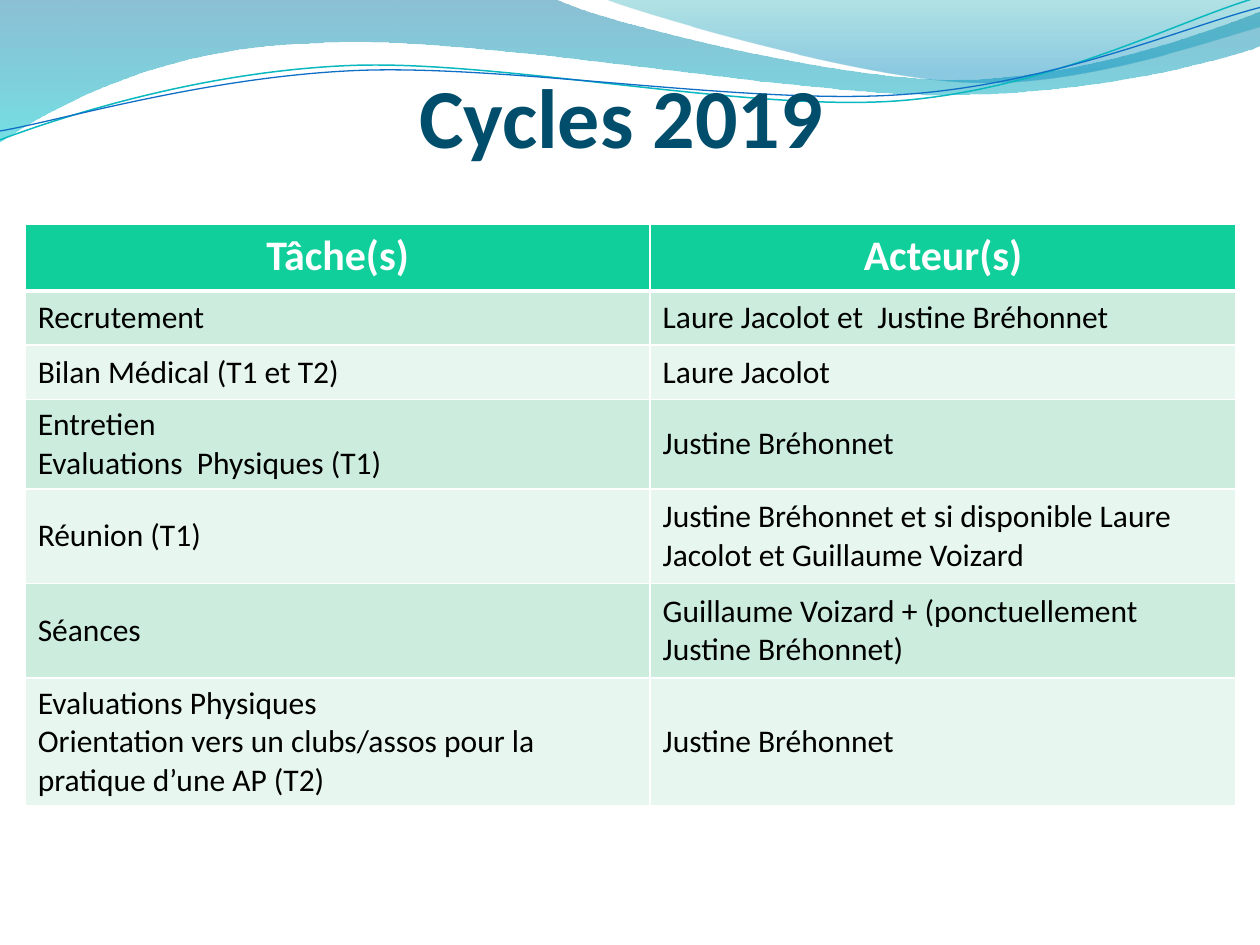
from math import cos, radians, sin

from lxml.etree import SubElement as Sub
from pptx import Presentation
from pptx.dml.color import RGBColor
from pptx.enum.text import MSO_ANCHOR as Anchor, PP_ALIGN as Align
from pptx.oxml import parse_xml
from pptx.oxml.ns import nsdecls, qn
from pptx.util import Inches, Pt

FONT = "Calibri"
WHITE, NAVY = "FFFFFF", "004E6C"
TILT = -2.7

# Each wave: start point, then straight (2 numbers) or curved (6 numbers) parts.
BANDS = [
    ([(0, 0), (4.4, -0.01), (4.76, 0.17, 6.64, 0.63, 7.58, 0.63),
      (8.53, 0.63, 9.58, 0.26, 10, 0.09), (10.01, 0.36),
      (9.83, 0.44, 8.7, 0.76, 7.46, 0.75), (6.22, 0.75, 3.82, 0.28, 2.57, 0.34),
      (1.29, 0.36, 0.46, 0.83, -0.01, 1.13), (0, 0)],
     [(0, "0074A1", 45), (1, "00C6CF", 55)]),
    ([(4.79, -0.01), (5.09, 0.11, 6.82, 0.62, 7.69, 0.65),
      (8.56, 0.69, 9.61, 0.32, 10, 0.21), (10, 0), (4.79, -0.01)],
     [(0, "00A1A9", 30), (0.8, "008BBF", 45)]),
]
# Each line: parts, centre of its tilted box, colour, width.
LINES = [
    ([(0, 1.11), (0.48, 0.93, 1.58, 0.57, 2.77, 0.52),
      (3.95, 0.47, 5.93, 0.89, 7.13, 0.8), (8.33, 0.71, 9.38, 0.15, 9.98, -0.02)],
     (4.99, 0.57), "0AB8BF", 0.85),
    ([(0, 1.04), (0.47, 0.96, 1.64, 0.61, 2.83, 0.56),
      (4.03, 0.51, 5.97, 0.84, 7.17, 0.75), (8.36, 0.67, 9.41, 0.21, 10, 0.06)],
     (5, 0.59), "0F6FC6", 0.75),
]
HEAD = ("Tâche(s)", "Acteur(s)")
TASKS = [
    ("Recrutement", "Laure Jacolot et  Justine Bréhonnet"),
    ("Bilan Médical (T1 et T2)", "Laure Jacolot"),
    ("Entretien\nEvaluations  Physiques (T1)", "Justine Bréhonnet"),
    ("Réunion (T1)",
     "Justine Bréhonnet et si disponible Laure Jacolot et Guillaume Voizard"),
    ("Séances", "Guillaume Voizard + (ponctuellement Justine Bréhonnet)"),
    ("Evaluations Physiques\n"
     "Orientation vers un clubs/assos pour la pratique d’une AP (T2)",
     "Justine Bréhonnet"),
]


def rgb(code):
    return RGBColor.from_string(code)


def style(run, color, **form):
    run.font.color.rgb = rgb(color)
    for name, value in {"name": FONT, **form}.items():
        setattr(run.font, name, value)


def level(parts, center):
    """Turn the points back by the tilt, so that the shape can carry it."""
    cx, cy = center
    c, s = cos(radians(-TILT)), sin(radians(-TILT))

    def turn(x, y):
        dx, dy = x - cx, y - cy
        return cx + dx * c - dy * s, cy + dx * s + dy * c

    return [sum((turn(*pair) for pair in zip(part[::2], part[1::2])), ())
            for part in parts]


def add_wave(shapes, left, top, parts, close):
    """Draw a freeform whose six-number parts are cubic curves."""
    pts = [(Inches(left + x), Inches(top + y))
           for part in parts for x, y in zip(part[::2], part[1::2])]
    pen = shapes.build_freeform(*pts[0], scale=1.0)
    pen.add_line_segments(pts[1:], close=close)
    wave = pen.convert_to_shape()
    wave.shadow.inherit = False
    legs = iter(list(wave._element.iter(qn("a:lnTo"))))
    for part in parts[1:]:
        leg = next(legs)
        if len(part) == 6:
            leg.addprevious(parse_xml(f'<a:cubicBezTo {nsdecls("a")}/>'))
            curve = leg.getprevious()
            for piece in (leg, next(legs), next(legs)):
                curve.append(piece[0])
                piece.getparent().remove(piece)
    return wave


def add_waves(slide, left, top):
    for parts, stops in BANDS:
        wave = add_wave(slide.shapes, left, top, parts, True)
        wave.line.fill.background()
        wave.fill.gradient()
        wave.fill.gradient_angle = 270
        for stop, (pos, color, _) in zip(wave.fill.gradient_stops, stops):
            stop.position = pos
            stop.color.rgb = rgb(color)
        for tag, (_, _, alpha) in zip(wave._element.spPr.iter(qn("a:srgbClr")), stops):
            Sub(tag, qn("a:alpha"), val=str(alpha * 1000))
    group = slide.shapes.add_group_shape()
    for parts, center, color, width in LINES:
        wave = add_wave(group.shapes, left, top, level(parts, center), False)
        wave.rotation = TILT
        wave.fill.background()
        wave.line.color.rgb = rgb(color)
        wave.line.width = Pt(width)


def set_title(slide, left, top, width, height):
    title = slide.shapes.title
    box = {"left": left, "top": top, "width": width, "height": height}
    for name, value in box.items():
        setattr(title, name, Inches(value))
    frame = title.text_frame
    frame.text = "Cycles 2019"
    form = {"margin_left": 0, "margin_right": 0, "margin_top": Inches(0.05),
            "margin_bottom": 0, "vertical_anchor": Anchor.BOTTOM, "word_wrap": True}
    for name, value in form.items():
        setattr(frame, name, value)
    para = frame.paragraphs[0]
    para.alignment = Align.CENTER
    run = para.runs[0]
    style(run, NAVY, size=Pt(48), bold=True)
    run.font._element.insert(0, parse_xml(
        f'<a:ln {nsdecls("a")} w="{Pt(1.42)}"><a:solidFill>'
        f'<a:srgbClr val="{NAVY}"/></a:solidFill></a:ln>'))
    slide.shapes._spTree.append(title._element)  # in front of the waves


def add_edges(cell, **widths):
    for side, width in widths.items():
        cell._tc.get_or_add_tcPr().append(parse_xml(
            f'<a:ln{side} {nsdecls("a")} w="{Pt(width)}"><a:solidFill>'
            f'<a:srgbClr val="{WHITE}"/></a:solidFill></a:ln{side}>'))


def fill_cell(cell, text, row):
    head = row == 0
    add_edges(cell, L=1, R=1, T=3 if row == 1 else 1, B=3 if head else 1)
    cell.fill.solid()
    cell.fill.fore_color.rgb = rgb(
        "10CF9B" if head else "CCEDDE" if row % 2 else "E7F6EF")
    cell.vertical_anchor = Anchor.TOP if head else Anchor.MIDDLE
    cell.text = text
    for para in cell.text_frame.paragraphs:
        para.alignment = Align.CENTER if head else Align.LEFT
        for run in para.runs:
            style(run, WHITE if head else "000000",
                  size=Pt(24 if head else 18), bold=head)


def add_tasks(slide, left, top, width, height):
    rows = [HEAD, *TASKS]
    table = slide.shapes.add_table(
        len(rows), 2, *map(Inches, (left, top, width, height))).table
    for col, share in zip(table.columns, (4.96, width - 4.96)):
        col.width = Inches(share)
    for line, tall in zip(table.rows, [0.53] + [0.43] * 3 + [0.75] * 3):
        line.height = Inches(tall)
    for r, row in enumerate(rows):
        for c, text in enumerate(row):
            fill_cell(table.cell(r, c), text, r)


def main():
    deck = Presentation()
    deck.slide_width, deck.slide_height = Inches(10), Inches(7.5)
    slide = deck.slides.add_slide(deck.slide_layouts[5])
    add_waves(slide, 0, 0)
    set_title(slide, 0.43, 0.44, 9, 0.87)
    add_tasks(slide, 0.2, 1.78, 9.61, 4.59)
    deck.save("out.pptx")


if __name__ == "__main__":
    main()
